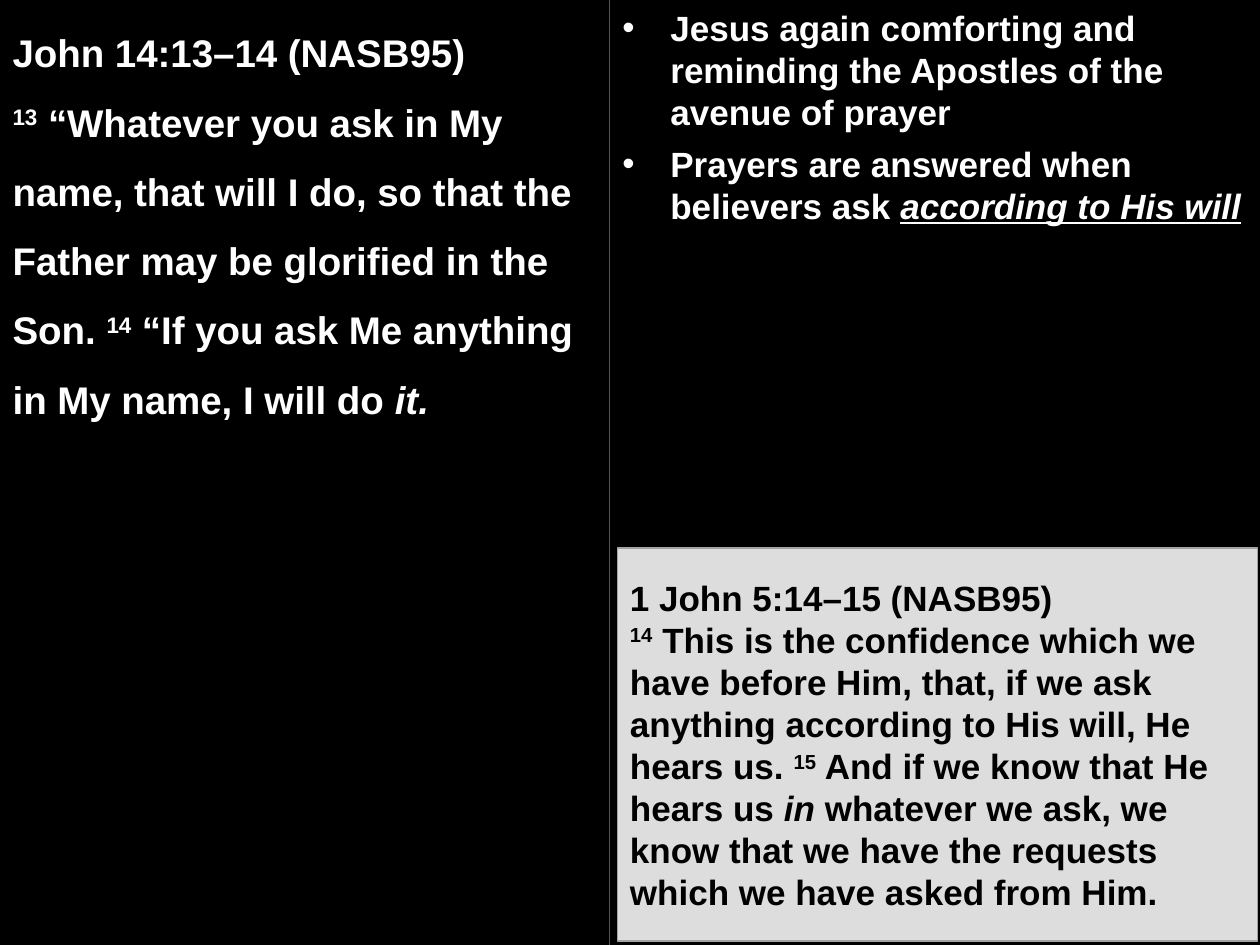
from lxml import etree
from pptx import Presentation
from pptx.dml.color import RGBColor
from pptx.enum.shapes import MSO_CONNECTOR, MSO_SHAPE
from pptx.enum.text import MSO_ANCHOR, MSO_AUTO_SIZE, PP_ALIGN
from pptx.oxml.ns import qn
from pptx.util import Cm, Pt

RECTANGLE = MSO_SHAPE.RECTANGLE
STRAIGHT = MSO_CONNECTOR.STRAIGHT
TOP, MIDDLE = MSO_ANCHOR.TOP, MSO_ANCHOR.MIDDLE
GROW, FIXED = MSO_AUTO_SIZE.SHAPE_TO_FIT_TEXT, MSO_AUTO_SIZE.NONE
LEFT = PP_ALIGN.LEFT

PLAIN, VERSE, ITALIC, STRESS = "plain", "verse", "italic", "stress"

MAIN_PASSAGE = [
    [("John 14:13–14 (NASB95)", PLAIN)],
    [
        ("13", VERSE),
        (" “Whatever you ask in My name, that will I do, so that the Father may be glorified in the Son. ", PLAIN),
        ("14", VERSE),
        (" “If you ask Me anything in My name, I will do ", PLAIN),
        ("it.", ITALIC),
    ],
]
POINTS = [
    [("Jesus again comforting and reminding the Apostles of the avenue of prayer", PLAIN)],
    [("Prayers are answered when believers ask ", PLAIN), ("according to His will", STRESS)],
]
CROSS_REFERENCE = [
    [("1 John 5:14–15 (NASB95)", PLAIN)],
    [
        ("14", VERSE),
        (" This is the confidence which we have before Him, that, if we ask anything according to His will, He hears us. ", PLAIN),
        ("15", VERSE),
        (" And if we know that He hears us ", PLAIN),
        ("in", ITALIC),
        (" whatever we ask, we know that we have the requests which we have asked from Him.", PLAIN),
    ],
]

THEME = {
    "font": "Arial",
    "passage_size": Pt(22),
    "note_size": Pt(20),
    "background": RGBColor(0x00, 0x00, 0x00),
    "light_text": RGBColor(0xFF, 0xFF, 0xFF),
    "dark_text": RGBColor(0x00, 0x00, 0x00),
    "divider": RGBColor(0xD8, 0xD8, 0xD8),
    "panel": RGBColor(0xDD, 0xDD, 0xDD),
    "panel_edge": RGBColor(0xA3, 0xA3, 0xA3),
}
VEIL_OPACITY = 61
WIDTH, HEIGHT = Cm(25.4), Cm(19.05)
DIVIDER_X = Cm(12.29)
POINT_ROWS = [(Cm(0), Cm(2.82)), (Cm(2.74), Cm(1.96))]
HANGING = Cm(0.97)


def place(part, left, top, width, height):
    part.left, part.top, part.width, part.height = left, top, width, height


def add_bullet(paragraph):
    properties = paragraph._p.get_or_add_pPr()
    properties.set("marL", str(HANGING))
    properties.set("indent", str(-HANGING))
    etree.SubElement(properties, qn("a:buFont")).set("typeface", THEME["font"])
    etree.SubElement(properties, qn("a:buChar")).set("char", "•")


def write(part, paragraphs, size, color, anchor=TOP, fit=GROW, spacing=1.0, bullets=False):
    frame = part.text_frame
    frame.word_wrap = True
    frame.auto_size = fit
    frame.vertical_anchor = anchor
    for index, runs in enumerate(paragraphs):
        paragraph = frame.add_paragraph() if index else frame.paragraphs[0]
        paragraph.alignment = LEFT
        paragraph.line_spacing = spacing
        paragraph.space_before = Pt(0)
        if bullets:
            add_bullet(paragraph)
        for text, style in runs:
            run = paragraph.add_run()
            run.text = text
            font = run.font
            font.name, font.size, font.bold = THEME["font"], size, True
            font.color.rgb = color
            if style == VERSE:
                run._r.get_or_add_rPr().set("baseline", "30000")
            if style in (ITALIC, STRESS):
                font.italic = True
            if style == STRESS:
                font.underline = True


def add_backdrop(slide):
    divider = slide.shapes.add_connector(STRAIGHT, DIVIDER_X, 0, DIVIDER_X, HEIGHT)
    divider.line.color.rgb = THEME["divider"]
    divider.line.width = Pt(0.75)
    etree.SubElement(divider._element.spPr, qn("a:effectLst"))

    veil = slide.shapes.add_shape(RECTANGLE, 0, 0, WIDTH, HEIGHT)
    veil.shadow.inherit = False
    veil.fill.solid()
    veil.fill.fore_color.rgb = THEME["background"]
    veil.line.fill.background()
    fill_color = veil._element.spPr.find(qn("a:solidFill"))[0]
    etree.SubElement(fill_color, qn("a:alpha")).set("val", str(VEIL_OPACITY * 1000))

    for part in (divider, veil):
        slide.shapes.title._element.addprevious(part._element)


def add_cross_reference(slide):
    panel = slide.shapes.add_shape(RECTANGLE, Cm(12.45), Cm(11.05), Cm(12.9), Cm(7.92))
    panel.shadow.inherit = False
    panel.fill.solid()
    panel.fill.fore_color.rgb = THEME["panel"]
    panel.line.color.rgb = THEME["panel_edge"]
    panel.line.width = Pt(1)
    write(panel, CROSS_REFERENCE, THEME["note_size"], THEME["dark_text"], MIDDLE, FIXED)


def main():
    deck = Presentation()
    deck.slide_width, deck.slide_height = WIDTH, HEIGHT
    slide = deck.slides.add_slide(deck.slide_layouts.get_by_name("Two Content"))
    slide.background.fill.solid()
    slide.background.fill.fore_color.rgb = THEME["background"]

    add_backdrop(slide)

    passage = slide.shapes.title
    place(passage, 0, 0, DIVIDER_X, Cm(8.71))
    write(passage, MAIN_PASSAGE, THEME["passage_size"], THEME["light_text"], spacing=1.5)

    point_bodies = [slide.placeholders[1], slide.placeholders[2]]
    for body, point, (top, height) in zip(point_bodies, POINTS, POINT_ROWS):
        place(body, DIVIDER_X, top, WIDTH - DIVIDER_X, height)
        write(body, [point], THEME["note_size"], THEME["light_text"], bullets=True)

    add_cross_reference(slide)
    deck.save("out.pptx")


if __name__ == "__main__":
    main()
